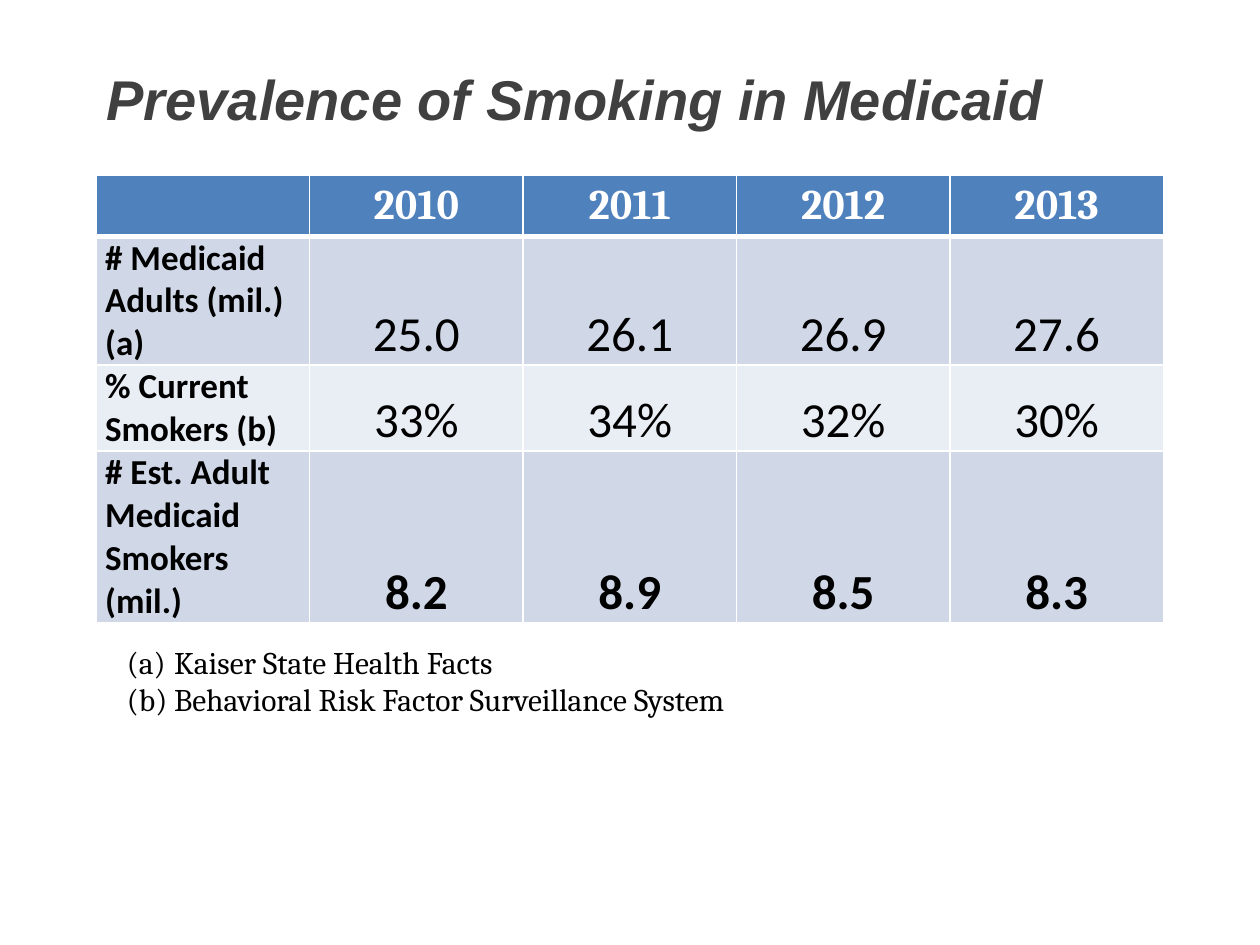
from lxml.etree import SubElement
from pptx import Presentation
from pptx.dml.color import RGBColor
from pptx.enum.text import MSO_ANCHOR as Anchor, MSO_AUTO_SIZE as AutoSize, PP_ALIGN as Align
from pptx.oxml.ns import qn
from pptx.util import Cm, Pt

HEADINGS = ["", "2010", "2011", "2012", "2013"]
MEASURES = [
    ["# Medicaid Adults (mil.)(a)", "25.0", "26.1", "26.9", "27.6"],
    ["% Current Smokers (b)", "33%", "34%", "32%", "30%"],
    ["# Est. Adult Medicaid Smokers (mil.)", "8.2", "8.9", "8.5", "8.3"],
]
ROW_HEIGHTS = [1.19, 2.59, 1.73, 3.45]
SOURCES = ["Kaiser State Health Facts", "Behavioral Risk Factor Surveillance System"]


def colour(code):
    """Turn a hex string into a colour."""
    return RGBColor.from_string(code)


def style(para, name, size, code, bold=False, italic=False):
    """Format every run of a paragraph."""
    for span in para.runs:
        font = span.font
        font.name, font.size, font.bold, font.italic = name, Pt(size), bold, italic
        font.color.rgb = colour(code)


def add_box(page, left, top, width, height):
    """Add a wrapping text box and return its frame."""
    frame = page.shapes.add_textbox(Cm(left), Cm(top), Cm(width), Cm(height)).text_frame
    frame.word_wrap = True
    return frame


def set_borders(cell, top, bottom):
    """Draw white borders with the given top and bottom widths."""
    properties = cell._tc.get_or_add_tcPr()
    for side, width in zip("LRTB", (1, 1, top, bottom)):
        line = SubElement(properties, qn(f"a:ln{side}"), w=str(Pt(width)))
        SubElement(SubElement(line, qn("a:solidFill")), qn("a:srgbClr"), val="FFFFFF")


def fill_cell(cell, text, row, column):
    """Write and format one cell according to its row and column."""
    set_borders(cell, 3 if row == 1 else 1, 3 if row == 0 else 1)
    cell.fill.solid()
    cell.fill.fore_color.rgb = colour(["4F81BD", "D0D8E8", "E9EDF4", "D0D8E8"][row])
    cell.text_frame.text = text
    para = cell.text_frame.paragraphs[0]
    para.alignment = Align.CENTER if column else Align.LEFT
    if row == 0:
        style(para, "Cambria", 24, "FFFFFF", bold=True)
        return
    cell.vertical_anchor = Anchor.BOTTOM
    cell.margin_left = cell.margin_right = Cm(0.18)
    cell.margin_top = cell.margin_bottom = 0
    is_total = row == len(MEASURES)
    style(para, "Calibri", 28 if column else 20, "000000", bold=is_total or column == 0)


def add_title(page, left, top, width, height):
    """Place the slide title."""
    frame = add_box(page, left, top, width, height)
    frame.margin_top = Cm(0.26)
    frame.text = "Prevalence of Smoking in Medicaid"
    style(frame.paragraphs[0], "Arial", 32, "404040", bold=True, italic=True)


def add_smoking_table(page, left, top, width, height):
    """Place the table of smoking figures by year."""
    rows = [HEADINGS, *MEASURES]
    table = page.shapes.add_table(
        len(rows), len(HEADINGS), Cm(left), Cm(top), Cm(width), Cm(height)).table
    for column in table.columns:
        column.width = Cm(width / len(HEADINGS))
    for row, texts in enumerate(rows):
        table.rows[row].height = Cm(height * ROW_HEIGHTS[row] / sum(ROW_HEIGHTS))
        for column, text in enumerate(texts):
            fill_cell(table.cell(row, column), text, row, column)


def add_sources(page, left, top, width, height):
    """Place the lettered list of sources."""
    frame = add_box(page, left, top, width, height)
    frame.auto_size = AutoSize.SHAPE_TO_FIT_TEXT
    frame.text = "\n".join(SOURCES)
    for para in frame.paragraphs:
        properties = para._p.get_or_add_pPr()
        properties.set("marL", str(Cm(0.95)))
        properties.set("indent", str(-Cm(0.95)))
        SubElement(properties, qn("a:buFont"), typeface="Cambria")
        SubElement(properties, qn("a:buAutoNum"), type="alphaLcParenBoth")
        style(para, "Cambria", 18, "000000")


def main():
    """Build the slide and save it."""
    deck = Presentation()
    deck.slide_width, deck.slide_height = Cm(25.4), Cm(19.05)
    page = deck.slides.add_slide(deck.slide_layouts[6])
    add_smoking_table(page, 1.94, 3.54, 21.51, sum(ROW_HEIGHTS))
    add_title(page, 1.9, 1.04, 21.54, 2.21)
    add_sources(page, 2.31, 12.83, 14.86, 3.33)
    deck.save("out.pptx")


if __name__ == "__main__":
    main()
